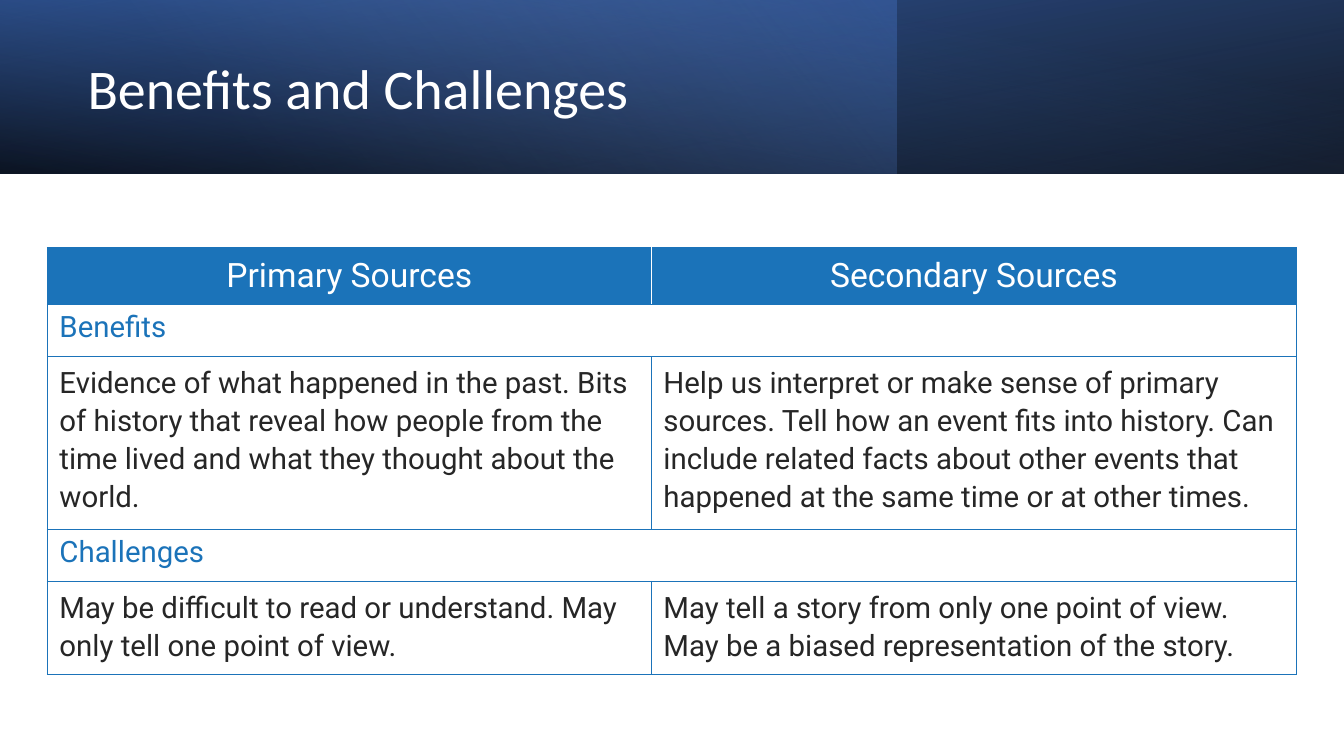
from lxml import etree
from pptx import Presentation
from pptx.dml.color import RGBColor
from pptx.enum import shapes, text
from pptx.oxml.ns import qn
from pptx.util import Inches, Pt

COLORS = {
    "black": "000000", "white": "FFFFFF", "ink": "262626", "blue": "1B73B9",
    "navy": "2F5597", "royal": "4472C4", "sky": "8FAADC",
}
TITLE = "Benefits and Challenges"
BANNER_HEIGHT = 1.72
# width, rotation, flipped, clockwise angle, stops of (position, color, opacity %)
BANNER_LAYERS = [
    (13.33, 180, True, 100, [(0, "black", 96), (1, "navy", 100)]),
    (8.89, 0, False, 140, [(0, "royal", 41), (0.74, "sky", 0)]),
    (13.33, 0, True, 260, [(0, "black", 63), (0.78, "royal", 15)]),
]
COLUMN_WIDTHS = [5.99, 6.4]
# kind, height, texts
ROWS = [
    ("header", 0.56, ["Primary Sources", "Secondary Sources"]),
    ("section", 0.52, ["Benefits"]),
    ("body", 1.71, [
        "Evidence of what happened in the past. Bits of history that reveal how "
        "people from the time lived and what they thought about the world.",
        "Help us interpret or make sense of primary sources. Tell how an event fits "
        "into history. Can include related facts about other events that happened "
        "at the same time or at other times."]),
    ("section", 0.52, ["Challenges"]),
    ("body", 0.92, [
        "May be difficult to read or understand. May only tell one point of view.",
        "May tell a story from only one point of view. \n"
        "May be a biased representation of the story."]),
]
# size, text color, fill, line spacing, alignment, anchor
LEFT, CENTER = text.PP_ALIGN.LEFT, text.PP_ALIGN.CENTER
TOP, MIDDLE = text.MSO_ANCHOR.TOP, text.MSO_ANCHOR.MIDDLE
CELL_STYLES = {
    "header": (24, "white", "blue", 1.0, CENTER, MIDDLE),
    "section": (21, "blue", "white", 1.0, LEFT, TOP),
    "body": (21, "ink", "white", 1.1, LEFT, TOP),
}


def rgb(name):
    return RGBColor.from_string(COLORS[name])


def format_font(paragraph, typeface, size, color):
    for run in paragraph.runs:
        run.font.name = typeface
        run.font.size = Pt(size)
        run.font.color.rgb = rgb(color)


def add_banner_layer(slide, width, rotation, flipped, angle, stops):
    shape = slide.shapes.add_shape(
        shapes.MSO_SHAPE.RECTANGLE, 0, 0, Inches(width), Inches(BANNER_HEIGHT))
    shape.shadow.inherit = False
    shape.line.fill.background()
    shape.rotation = rotation
    if flipped:
        shape._element.spPr.find(qn("a:xfrm")).set("flipH", "1")
    shape.fill.gradient()
    shape.fill.gradient_angle = 360 - angle  # python-pptx counts counter-clockwise
    for stop, (position, color, _) in zip(shape.fill.gradient_stops, stops):
        stop.position = position
        stop.color.rgb = rgb(color)
    gradient = shape._element.spPr.find(qn("a:gradFill"))
    for color_element, (_, _, opacity) in zip(gradient.iter(qn("a:srgbClr")), stops):
        etree.SubElement(color_element, qn("a:alpha"), val=str(opacity * 1000))


def add_title(slide):
    title = slide.shapes.add_textbox(
        Inches(0.77), Inches(0.27), Inches(7.72), Inches(1.27))
    frame = title.text_frame
    frame.word_wrap = True
    frame.vertical_anchor = MIDDLE
    paragraph = frame.paragraphs[0]
    paragraph.text = TITLE
    paragraph.line_spacing = 0.9
    format_font(paragraph, "Calibri", 40, "white")


def set_borders(cell, white_side):
    """Draw all four sides in blue, except for white_side."""
    properties = cell._tc.get_or_add_tcPr()
    for side in ("lnL", "lnR", "lnT", "lnB"):
        line = etree.SubElement(properties, qn(f"a:{side}"), w=str(Pt(1)))
        fill = etree.SubElement(line, qn("a:solidFill"))
        color = COLORS["white" if side == white_side else "blue"]
        etree.SubElement(fill, qn("a:srgbClr"), val=color)


def format_cell(cell, kind, column):
    size, color, fill, spacing, alignment, anchor = CELL_STYLES[kind]
    cell.margin_left = cell.margin_right = Inches(0.12)
    cell.margin_top = cell.margin_bottom = Inches(0.06)
    cell.vertical_anchor = anchor
    set_borders(cell, ("lnR", "lnL")[column] if kind == "header" else None)
    cell.fill.solid()
    cell.fill.fore_color.rgb = rgb(fill)
    paragraph = cell.text_frame.paragraphs[0]
    paragraph.alignment = alignment
    paragraph.line_spacing = spacing
    format_font(paragraph, "Roboto", size, color)


def add_sources_table(slide):
    height = sum(row_height for _, row_height, _ in ROWS)
    table = slide.shapes.add_table(
        len(ROWS), len(COLUMN_WIDTHS), Inches(0.47), Inches(2.46),
        Inches(sum(COLUMN_WIDTHS)), Inches(height)).table
    table.first_row = table.horz_banding = False
    for column, width in zip(table.columns, COLUMN_WIDTHS):
        column.width = Inches(width)
    for row_index, (kind, row_height, texts) in enumerate(ROWS):
        row = table.rows[row_index]
        row.height = Inches(row_height)
        if kind == "section":
            row.cells[0].merge(row.cells[1])
        for column, content in enumerate(texts):
            row.cells[column].text_frame.paragraphs[0].text = content
        for column, cell in enumerate(row.cells):
            format_cell(cell, kind, column)


def main():
    presentation = Presentation()
    presentation.slide_width = Inches(13.33)
    presentation.slide_height = Inches(7.5)
    slide = presentation.slides.add_slide(presentation.slide_layouts[6])
    for layer in BANNER_LAYERS:
        add_banner_layer(slide, *layer)
    add_title(slide)
    add_sources_table(slide)
    presentation.save("out.pptx")


if __name__ == "__main__":
    main()
